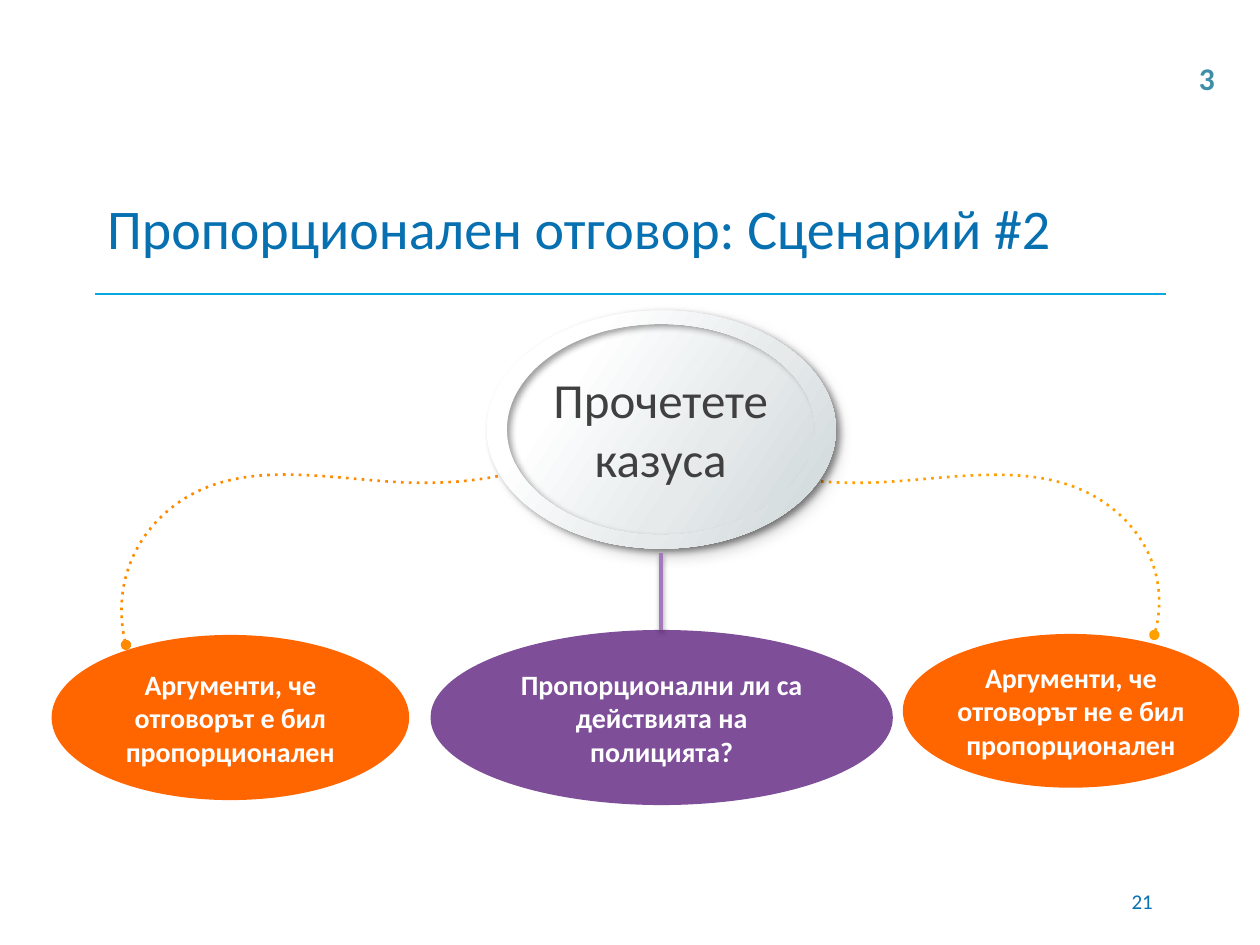
from lxml import etree
from pptx import Presentation
from pptx import util as u
from pptx.dml.color import RGBColor
from pptx.enum import shapes, text
from pptx.oxml.ns import qn

COLORS = {
    "rule": "0BA7DF", "title": "0770B1", "number": "3E8EA9",
    "orange": "FF6600", "purple": "7E4E99", "stem": "A379BB",
    "left": "FF8A00", "right": "FF9F00",
    "white": "FFFFFF", "dark": "404040", "black": "000000",
}
SILVER = [(23, "FFFFFF"), (63, "E6EAEB"), (100, "CDD5D8")]
CENTER, RIGHT = text.PP_ALIGN.CENTER, text.PP_ALIGN.RIGHT
ARC = 0.55  # Bezier handle length for a quarter ellipse


def rgb(name):
    return RGBColor.from_string(COLORS[name])


def box(*lengths):
    return [u.Cm(v) for v in lengths]


def write(sp, content, size, color, bold=False, align=text.PP_ALIGN.LEFT,
          anchor=text.MSO_ANCHOR.MIDDLE, wrap=True, insets=(0.25, 0.13)):
    tf = sp.text_frame
    tf.word_wrap = wrap
    tf.vertical_anchor = anchor
    tf.margin_left = tf.margin_right = u.Cm(insets[0])
    tf.margin_top = tf.margin_bottom = u.Cm(insets[1])
    p = tf.paragraphs[0]
    p.alignment = align
    r = p.add_run()
    r.text = content
    r.font.name, r.font.size, r.font.bold = "Calibri", u.Pt(size), bold
    r.font.color.rgb = rgb(color)


def set_shadow(sp, blur=0, dist=0, angle=0):
    """Replace the theme shadow; call after fill and line are set."""
    effects = etree.SubElement(sp._element.spPr, qn("a:effectLst"))
    if blur:
        outer = etree.SubElement(effects, qn("a:outerShdw"), blurRad=str(u.Pt(blur)),
                                 dist=str(u.Pt(dist)), dir=str(angle * 60000),
                                 algn="tl", rotWithShape="0")
        clr = etree.SubElement(outer, qn("a:srgbClr"), val=COLORS["black"])
        etree.SubElement(clr, qn("a:alpha"), val="38000")


def silver_fill(sp):
    sp.fill.gradient()
    sp.fill.gradient_angle = 360 - 35
    stops = sp._element.spPr.find(qn("a:gradFill")).find(qn("a:gsLst"))
    for gs in list(stops):
        stops.remove(gs)
    for pos, color in SILVER:
        gs = etree.SubElement(stops, qn("a:gs"), pos=str(pos * 1000))
        etree.SubElement(gs, qn("a:srgbClr"), val=color)
    sp.line.fill.background()


def add_ellipse(s, at, color=None):
    sp = s.shapes.add_shape(shapes.MSO_SHAPE.OVAL, *box(*at))
    if color:
        sp.fill.solid()
        sp.fill.fore_color.rgb = rgb(color)
        sp.line.fill.background()
        set_shadow(sp)
    else:
        silver_fill(sp)
        set_shadow(sp, 12, 7.1, 39)
    return sp


def add_line(s, start, end, color, width, **shadow):
    line = s.shapes.add_connector(shapes.MSO_CONNECTOR.STRAIGHT, *box(*start, *end))
    line.line.color.rgb = rgb(color)
    line.line.width = u.Pt(width)
    set_shadow(line, **shadow)


def add_curves(s, at, contours, close=False):
    """Freeform filling the frame, its outline made of cubic curves."""
    x, y, w, h = box(*at)
    builder = s.shapes.build_freeform(x, y)
    builder.add_line_segments([(x + w, y + h)], close=False)
    sp = builder.convert_to_shape()
    outline = next(sp._element.iter(qn("a:path")))
    for step in list(outline):
        outline.remove(step)
    for nodes in contours:
        groups = [("a:moveTo", nodes[:1])]
        groups += [("a:cubicBezTo", nodes[i:i + 3]) for i in range(1, len(nodes), 3)]
        for tag, group in groups:
            step = etree.SubElement(outline, qn(tag))
            for px, py in group:
                etree.SubElement(step, qn("a:pt"), x=str(u.Cm(px) - x), y=str(u.Cm(py) - y))
        if close:
            etree.SubElement(outline, qn("a:close"))
    return sp


def add_dotted_curve(s, at, nodes, color):
    sp = add_curves(s, at, [nodes])
    sp.fill.background()
    sp.line.color.rgb = rgb(color)
    sp.line.width = u.Pt(1.5)
    ln = sp._element.spPr.find(qn("a:ln"))
    dash = etree.SubElement(ln, qn("a:custDash"))
    etree.SubElement(dash, qn("a:ds"), d="100000", sp="200000")
    for end in ("a:headEnd", "a:tailEnd"):
        etree.SubElement(ln, qn(end), type="oval")
    set_shadow(sp)


def ellipse_nodes(center, rx, ry, turn):
    unit = [(1, 0), (1, ARC), (ARC, 1), (0, 1), (-ARC, 1), (-1, ARC), (-1, 0),
            (-1, -ARC), (-ARC, -1), (0, -1), (ARC, -1), (1, -ARC), (1, 0)]
    return [(center[0] + rx * ux, center[1] + turn * ry * uy) for ux, uy in unit]


def add_ring(s, center, outer, inner):
    (cx, cy), (rx, ry) = center, outer
    contours = [ellipse_nodes(center, *outer, 1), ellipse_nodes(center, *inner, -1)]
    sp = add_curves(s, (cx - rx, cy - ry, 2 * rx, 2 * ry), contours, close=True)
    silver_fill(sp)
    set_shadow(sp, 4, 2.8, 39)


def main():
    prs = Presentation()
    prs.slide_width, prs.slide_height = box(25.4, 19.05)
    s = prs.slides.add_slide(prs.slide_layouts[5])

    # Title, rule and slide number
    add_line(s, (1.91, 5.93), (23.5, 5.93), "rule", 1)
    title = s.shapes.title
    title.left, title.top, title.width, title.height = box(1.91, 3.45, 21.59, 2.26)
    write(title, "Пропорционален отговор: Сценарий #2", 32, "title")
    write(s.shapes.add_textbox(*box(18.21, 17.65, 5.28, 1.02)), "21", 12, "title", align=RIGHT)

    # Answers, their dotted curves and the question
    label = dict(size=16, color="white", bold=True, align=CENTER, insets=(0.1, 0.13))
    write(add_ellipse(s, (1.04, 12.8, 7.21, 3.33), "orange"),
          "Аргументи, че отговорът е бил пропорционален", **label)
    add_dotted_curve(s, (2.44, 9.47, 8.15, 3.53),
                     [(10.59, 9.47), (9.83, 9.68), (9.07, 9.75), (8.28, 9.73),
                      (6.5, 9.68), (4.5, 9.09), (3.15, 10.52),
                      (2.54, 11.18), (2.31, 12.12), (2.54, 13)], "left")
    write(add_ellipse(s, (18.2, 12.78, 6.78, 3.1), "orange"),
          "Аргументи, че отговорът не е бил пропорционален", **label)
    add_dotted_curve(s, (15.21, 9.47, 8.15, 3.33),
                     [(15.21, 9.47), (15.98, 9.68), (16.74, 9.75), (17.53, 9.73),
                      (19.3, 9.68), (21.31, 9.12), (22.66, 10.46),
                      (23.27, 11.07), (23.52, 11.96), (23.27, 12.8)], "right")
    write(add_ellipse(s, (8.68, 12.7, 9.32, 3.53), "purple"),
          "Пропорционални ли са действията на полицията?", **label)

    # Silver hub with its rim and stem
    write(add_ellipse(s, (10.03, 6.37, 6.58, 4.55)), "Прочетете казуса", 28, "dark",
          align=CENTER, insets=(0.1, 0.1))
    add_ring(s, (13.33, 8.66), outer=(3.52, 2.4), inner=(3.11, 2.13))
    add_line(s, (13.33, 11.15), (13.33, 12.7), "stem", 2, blur=3.1, dist=1.6, angle=90)

    # Step number
    write(s.shapes.add_textbox(*box(23.92, 1.07, 0.84, 1.02)), "3", 18, "number", bold=True,
          anchor=text.MSO_ANCHOR.TOP, wrap=False)
    prs.save("out.pptx")


if __name__ == "__main__":
    main()
